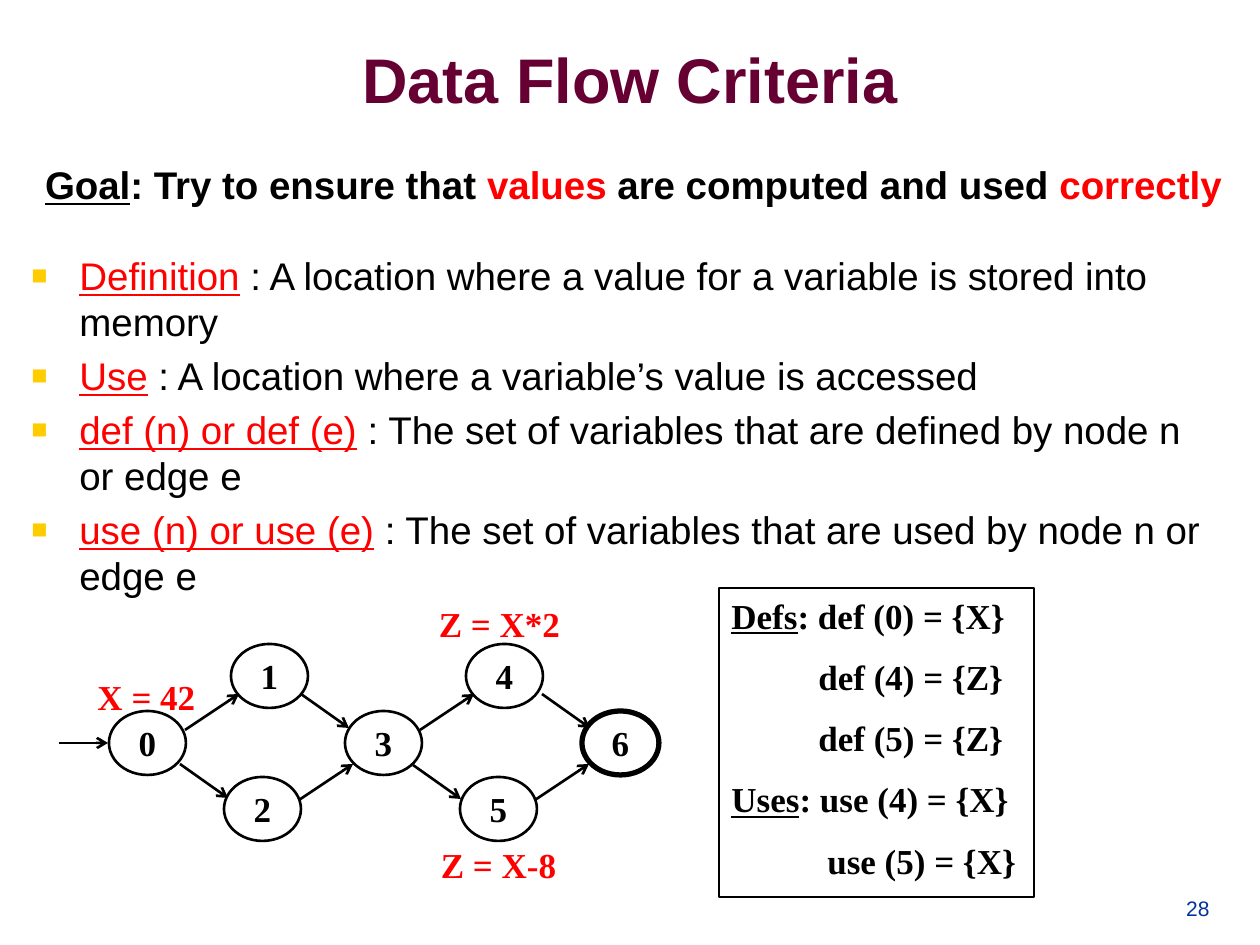
from lxml.etree import SubElement
from pptx import Presentation
from pptx.dml.color import RGBColor
from pptx.enum.shapes import MSO_CONNECTOR, MSO_SHAPE
from pptx.enum.text import MSO_ANCHOR, PP_ALIGN
from pptx.oxml.ns import qn
from pptx.util import Pt

PX = 914400 / 126
BLACK = RGBColor(0, 0, 0)
RED = RGBColor(255, 0, 0)
PLUM = RGBColor(0x66, 0, 0x33)
BLUE = RGBColor(0, 0x33, 0x99)
SANS, SERIF = "Arial", "Times New Roman"

TERMS = [
    ("Definition", "A location where a value for a variable is stored into memory"),
    ("Use", "A location where a variable’s value is accessed"),
    ("def (n) or def (e)", "The set of variables that are defined by node n or edge e"),
    ("use (n) or use (e)", "The set of variables that are used by node n or edge e"),
]
# Indent in px, underlined head, rest of the line
SETS = [
    (0, "Defs", ": def (0) = {X}"),
    (87, "", "def (4) = {Z}"),
    (87, "", "def (5) = {Z}"),
    (0, "Uses", ": use (4) = {X}"),
    (96, "", "use (5) = {X}"),
]
NODES = [("0", 109, 711), ("1", 231, 644), ("2", 224, 777), ("3", 345, 711),
         ("4", 466, 644), ("5", 460, 777), ("6", 582, 711)]
UP, DOWN, FLAT = (54, -36), (48, 34), (49, 0)
EDGES = [(59, 743, FLAT), (185, 730, UP), (420, 730, UP), (299, 800, UP),
         (535, 800, UP), (180, 764, DOWN), (413, 765, DOWN),
         (301, 694, DOWN), (542, 694, DOWN)]
LABELS = [("X = 42", 76, 669, 141), ("Z = X-8", 428, 837, 141),
          ("Z = X*2", 417, 596, 165)]


def emu(*sizes):
    return [round(size * PX) for size in sizes]


def style(para, size, face, color=None, bold=False):
    font = para.font
    font.size, font.name, font.bold = Pt(size), face, bold
    if color is not None:
        font.color.rgb = color


def add_run(para, text, color=None, under=False):
    run = para.add_run()
    run.text = text
    if color is not None:
        run.font.color.rgb = color
    if under:
        run.font.underline = True


def add_box(slide, place, anchor=MSO_ANCHOR.TOP):
    frame = slide.shapes.add_textbox(*emu(*place)).text_frame
    frame.word_wrap = True
    frame.vertical_anchor = anchor
    return frame


def add_label(slide, text, place, size, face, color, bold=True,
              align=PP_ALIGN.CENTER, anchor=MSO_ANCHOR.TOP):
    para = add_box(slide, place, anchor).paragraphs[0]
    para.text, para.alignment = text, align
    style(para, size, face, color, bold)


def add_outline(slide, kind, place, width):
    shape = slide.shapes.add_shape(kind, *emu(*place))
    shape.shadow.inherit = False
    shape.fill.background()
    shape.line.color.rgb = BLACK
    shape.line.width = Pt(width)
    return shape


def add_paras(frame, count, gap):
    """Yield the paragraphs of a frame, with a gap before all but the first."""
    for i in range(count):
        para = frame.add_paragraph() if i else frame.paragraphs[0]
        if i:
            para.space_before = Pt(gap)
        yield para


def add_bullet(para):
    props = para._p.get_or_add_pPr()
    left = emu(48)[0]
    props.set("marL", str(left))
    props.set("indent", str(-left))
    tint = SubElement(props, qn("a:buClr"))
    SubElement(tint, qn("a:srgbClr"), val="FFCC00")
    SubElement(props, qn("a:buSzPct"), val="70000")
    SubElement(props, qn("a:buFont"), typeface=SANS)
    SubElement(props, qn("a:buChar"), char="■")


def add_goal(slide):
    para = add_box(slide, (21, 155, 1225, 59)).paragraphs[0]
    para.alignment = PP_ALIGN.CENTER
    style(para, 22, SANS, bold=True)
    add_run(para, "Goal", BLACK, True)
    for text, color in [(": Try to ensure that ", BLACK), ("values", RED),
                        (" are computed and used ", BLACK), ("correctly", RED)]:
        add_run(para, text, color)


def add_terms(slide):
    frame = add_box(slide, (19, 246, 1218, 393))
    for para, (term, text) in zip(add_paras(frame, len(TERMS), 4.6), TERMS):
        para.line_spacing = Pt(26.3)
        add_bullet(para)
        style(para, 22, SANS)
        add_run(para, term, RED, True)
        add_run(para, " : " + text, BLACK)


def add_node(slide, name, x, y, width):
    frame = add_outline(slide, MSO_SHAPE.OVAL, (x, y, 77, 64), width).text_frame
    frame.margin_left = frame.margin_right = 0
    frame.margin_top = frame.margin_bottom = 0
    frame.word_wrap = False
    frame.vertical_anchor = MSO_ANCHOR.MIDDLE
    para = frame.paragraphs[0]
    para.text, para.alignment = name, PP_ALIGN.CENTER
    style(para, 20, SERIF, BLACK, True)


def add_edge(slide, x, y, step):
    ends = emu(x, y, x + step[0], y + step[1])
    edge = slide.shapes.add_connector(MSO_CONNECTOR.STRAIGHT, *ends)
    edge.line.color.rgb = BLACK
    edge.line.width = Pt(1.5)
    SubElement(edge.line._get_or_add_ln(), qn("a:tailEnd"), type="arrow")
    SubElement(edge._element.spPr, qn("a:effectLst"))


def add_sets(slide):
    frame = add_outline(slide, MSO_SHAPE.RECTANGLE, (719, 588, 315, 309), 1).text_frame
    frame.word_wrap = True
    frame.vertical_anchor = MSO_ANCHOR.TOP
    for para, (left, head, rest) in zip(add_paras(frame, len(SETS), 11), SETS):
        para.alignment = PP_ALIGN.LEFT
        para._p.get_or_add_pPr().set("marL", str(emu(left)[0]))
        style(para, 20, SERIF, BLACK, True)
        if head:
            add_run(para, head, BLACK, True)
        add_run(para, rest, BLACK)


def main():
    deck = Presentation()
    deck.slide_width, deck.slide_height = emu(1260, 945)
    slide = deck.slides.add_slide(deck.slide_layouts[6])
    add_label(slide, "Data Flow Criteria", (63, -1, 1134, 158), 36, SANS, PLUM,
              anchor=MSO_ANCHOR.MIDDLE)
    add_goal(slide)
    add_terms(slide)
    for name, x, y in NODES:
        add_node(slide, name, x, y, 3 if name == "6" else 1.5)
    for x, y, step in EDGES:
        add_edge(slide, x, y, step)
    for text, x, y, width in LABELS:
        add_label(slide, text, (x, y, width, 54), 20, SERIF, RED)
    add_sets(slide)
    add_label(slide, "28", (1135, 861, 87, 66), 12, SANS, BLUE, False,
              PP_ALIGN.RIGHT, MSO_ANCHOR.BOTTOM)
    deck.save("out.pptx")


if __name__ == "__main__":
    main()
